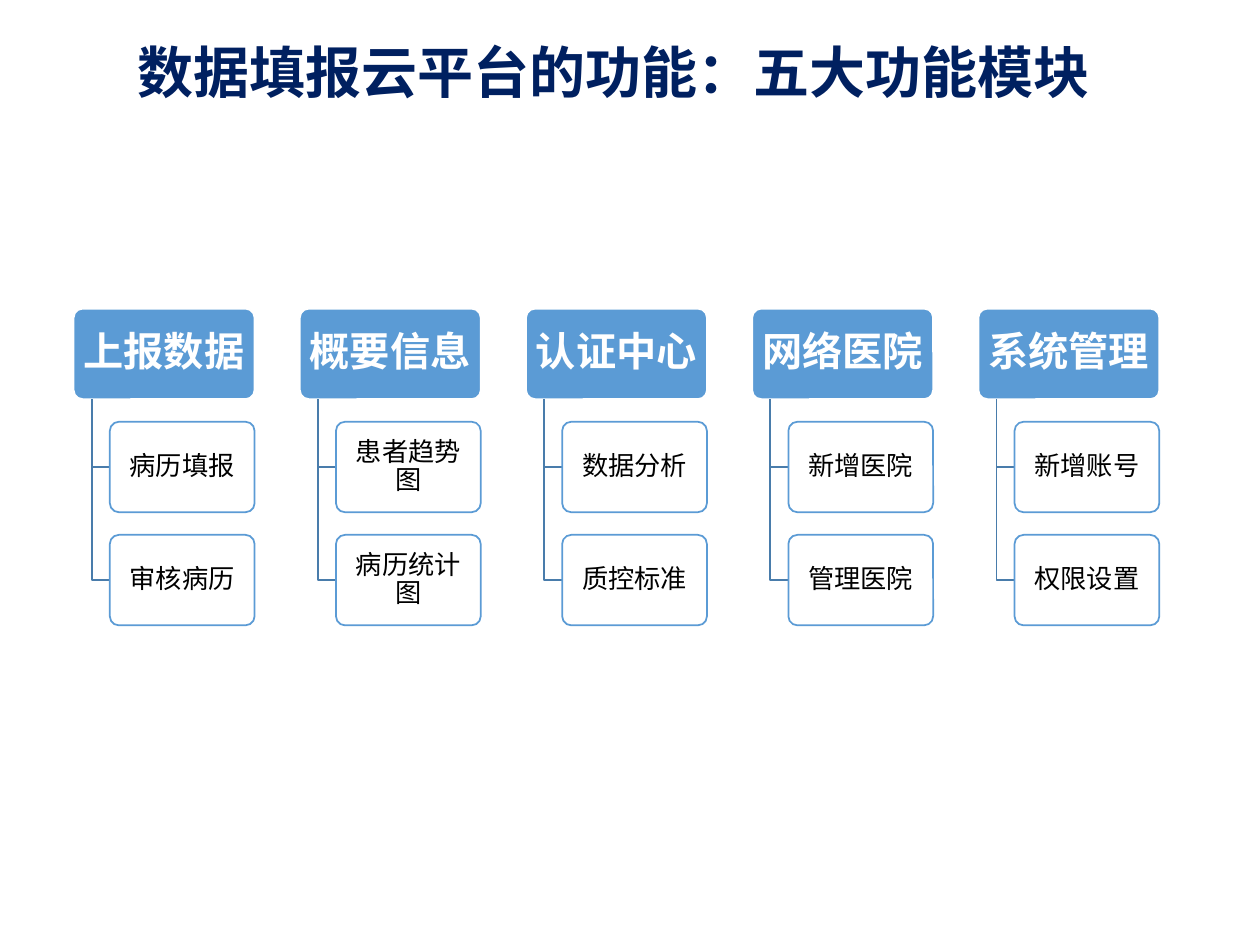
from lxml import etree
from pptx import Presentation
from pptx import util as u
from pptx.dml.color import RGBColor
from pptx.enum import shapes, text
from pptx.oxml.ns import qn

# Content: each module with its functions
TITLE = "数据填报云平台的功能：五大功能模块"
MODULES = [
    ("上报数据", ["病历填报", "审核病历"]),
    ("概要信息", ["患者趋势图", "病历统计图"]),
    ("认证中心", ["数据分析", "质控标准"]),
    ("网络医院", ["新增医院", "管理医院"]),
    ("系统管理", ["新增账号", "权限设置"]),
]


class Theme:
    font = "Noto Sans CJK SC"
    title_color, module_fill, branch_line = "002060", "5B9BD5", "497CAB"
    white, black = "FFFFFF", "000000"
    title_size, module_size, function_size = 32, 23, 15
    line_width = 1


# Layout in points
TITLE_BOX = (71.3, 15.8, 590.4, 54.7)
LEFT, TOP, PITCH = 42.1, 176.4, 129.25
BOX_WIDTH, BOX_HEIGHT = 103.4, 51.7
GAP = BOX_HEIGHT / 4
STEM = BOX_WIDTH / 10


def write(shape, words, size, color, align, bold=False, inset=(7.2, 3.6)):
    frame = shape.text_frame
    frame.word_wrap = True
    frame.vertical_anchor = text.MSO_ANCHOR.MIDDLE
    frame.margin_left = frame.margin_right = u.Pt(inset[0])
    frame.margin_top = frame.margin_bottom = u.Pt(inset[1])
    paragraph = frame.paragraphs[0]
    paragraph.alignment = align
    paragraph.line_spacing = 0.9
    run = paragraph.add_run()
    run.text = words
    font = run.font
    font.name, font.size, font.bold = Theme.font, u.Pt(size), bold
    font.color.rgb = RGBColor.from_string(color)
    east_asian = etree.SubElement(run._r.get_or_add_rPr(), qn("a:ea"))
    east_asian.set("typeface", Theme.font)


def set_line(shape, color):
    shape.line.color.rgb = RGBColor.from_string(color)
    shape.line.width = u.Pt(Theme.line_width)
    shape.shadow.inherit = False


def add_box(slide, left, top, width, fill, line, opacity=100):
    shape = slide.shapes.add_shape(
        shapes.MSO_SHAPE.ROUNDED_RECTANGLE,
        u.Pt(left), u.Pt(top), u.Pt(width), u.Pt(BOX_HEIGHT))
    shape.adjustments[0] = 0.1
    shape.fill.solid()
    shape.fill.fore_color.rgb = RGBColor.from_string(fill)
    if opacity < 100:
        color = shape.fill._xPr.find(qn("a:solidFill"))[0]
        etree.SubElement(color, qn("a:alpha")).set("val", str(opacity * 1000))
    set_line(shape, line)
    return shape


def add_branch(slide, left, top, right, bottom):
    builder = slide.shapes.build_freeform(u.Pt(left), u.Pt(top))
    builder.add_line_segments(
        [(u.Pt(left), u.Pt(bottom)), (u.Pt(right), u.Pt(bottom))], close=False)
    branch = builder.convert_to_shape()
    branch.fill.background()
    set_line(branch, Theme.branch_line)


def add_module(slide, left, name, functions):
    center = text.PP_ALIGN.CENTER
    header = add_box(slide, left, TOP, BOX_WIDTH, Theme.module_fill, Theme.white)
    write(header, name, Theme.module_size, Theme.white, center, True, (4, 2))
    function_left = left + 2 * STEM
    for row, function in enumerate(functions, start=1):
        top = TOP + row * (BOX_HEIGHT + GAP)
        add_branch(slide, left + STEM, TOP + BOX_HEIGHT,
                   function_left, top + BOX_HEIGHT / 2)
        box = add_box(slide, function_left, top, BOX_WIDTH - 2 * STEM,
                      Theme.white, Theme.module_fill, opacity=90)
        write(box, function, Theme.function_size, Theme.black, center, inset=(3, 2))


def main():
    presentation = Presentation()
    presentation.slide_width, presentation.slide_height = u.Pt(720), u.Pt(540)
    slide = presentation.slides.add_slide(presentation.slide_layouts[6])

    # Title
    title = slide.shapes.add_textbox(*(u.Pt(value) for value in TITLE_BOX))
    write(title, TITLE, Theme.title_size, Theme.title_color,
          text.PP_ALIGN.LEFT, bold=True)

    # Module trees, side by side
    for column, (name, functions) in enumerate(MODULES):
        add_module(slide, LEFT + column * PITCH, name, functions)

    presentation.save("out.pptx")


if __name__ == "__main__":
    main()
